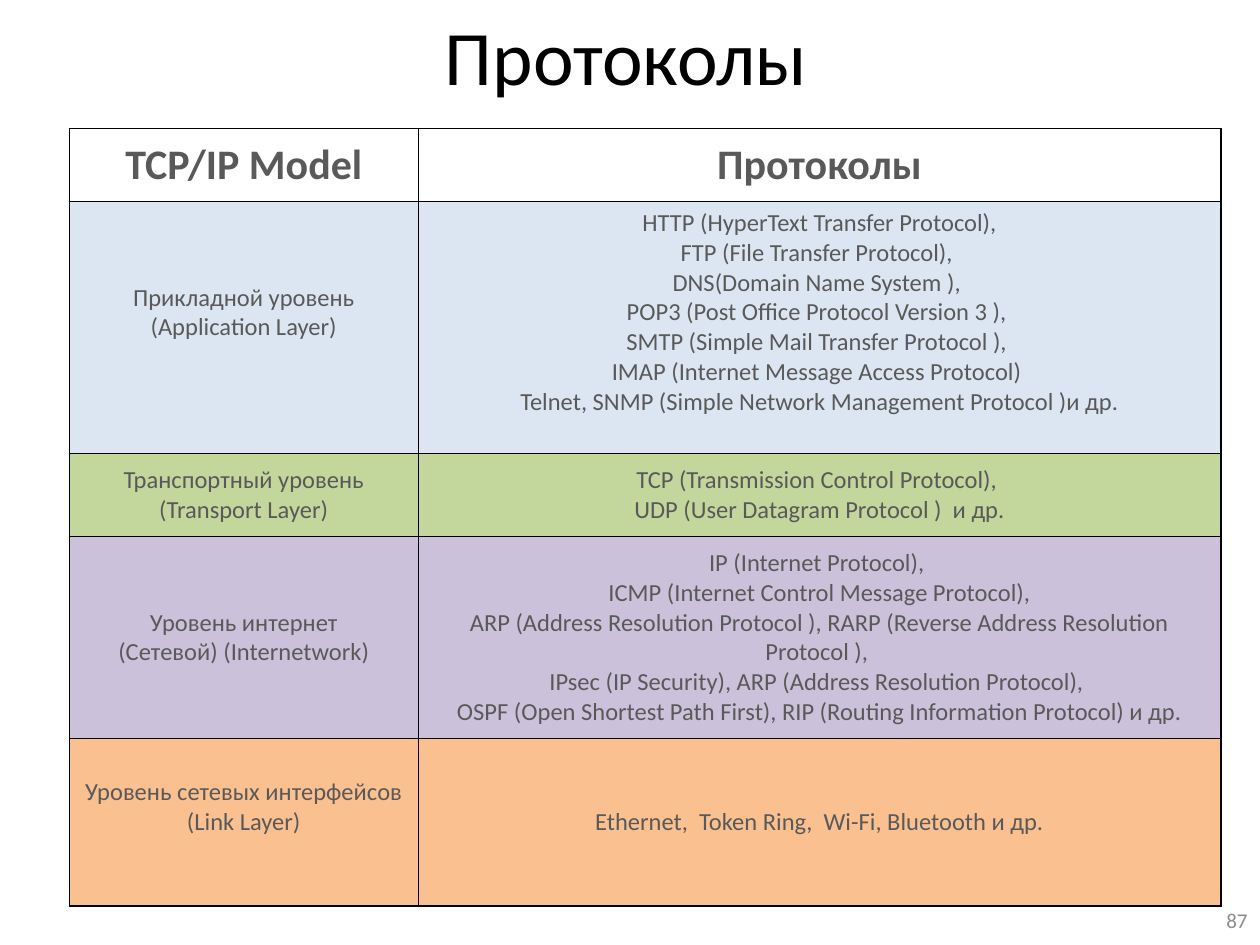
from dataclasses import dataclass
from typing import Any

from lxml import etree
from pptx import Presentation
from pptx import util as u
from pptx.dml.color import RGBColor
from pptx.enum import text
from pptx.oxml import ns

BLACK = RGBColor(0x00, 0x00, 0x00)
DARK_GRAY = RGBColor(0x59, 0x59, 0x59)
PAGE_GRAY = RGBColor(0x8C, 0x8C, 0x8C)
BLUE = RGBColor(0xDC, 0xE6, 0xF2)
GREEN = RGBColor(0xC3, 0xD6, 0x9B)
PURPLE = RGBColor(0xCC, 0xC1, 0xDA)
ORANGE = RGBColor(0xFA, 0xC0, 0x90)

CENTER = text.PP_ALIGN.CENTER
RIGHT = text.PP_ALIGN.RIGHT
MIDDLE = text.MSO_ANCHOR.MIDDLE

BASE = 0.05    # usual bottom margin of a cell, inches
RAISED = 0.29  # bottom margin that lifts the text by half a line

COLUMNS = [2.77, 6.37]
HEADER = ["TCP/IP Model", "Протоколы"]
HEADER_HEIGHT = 0.58

# height, fill, (level lines, bottom margin), (protocol lines, bottom margin)
LAYERS = [
    (2.0, BLUE,
     (["Прикладной уровень", "(Application Layer)"], RAISED),
     ([" HTTP (HyperText Transfer Protocol), ",
       "FTP (File Transfer Protocol), ",
       "DNS(Domain Name System ), ",
       "POP3 (Post Office Protocol Version 3 ), ",
       "SMTP (Simple Mail Transfer Protocol ), ",
       "IMAP (Internet Message Access Protocol) ",
       "Telnet, SNMP (Simple Network Management Protocol )и др."], RAISED)),
    (0.66, GREEN,
     (["Транспортный уровень", "(Transport Layer)"], BASE),
     (["TCP (Transmission Control Protocol), ",
       "UDP (User Datagram Protocol )  и др."], BASE)),
    (1.6, PURPLE,
     (["Уровень интернет", "(Сетевой) (Internetwork)"], BASE),
     (["IP (Internet Protocol), ",
       "ICMP (Internet Control Message Protocol),",
       "ARP (Address Resolution Protocol ), RARP (Reverse Address Resolution Protocol ), ",
       "IPsec (IP Security), ARP (Address Resolution Protocol), ",
       "OSPF (Open Shortest Path First), RIP (Routing Information Protocol) и др."], BASE)),
    (1.33, ORANGE,
     (["Уровень сетевых интерфейсов", "(Link Layer)"], RAISED),
     (["Ethernet,  Token Ring,  Wi-Fi, Bluetooth и др."], BASE)),
]


@dataclass
class Deck:
    s: Any
    font: str = "Calibri"
    border: float = 1

    def add_lines(self, tf, lines, size, color, align=CENTER, bold=False):
        for i, line in enumerate(lines):
            p = tf.paragraphs[0] if i == 0 else tf.add_paragraph()
            p.alignment = align
            r = p.add_run()
            r.text = line
            r.font.name = self.font
            r.font.size = u.Pt(size)
            r.font.bold = bold
            r.font.color.rgb = color

    def label(self, box, line, size, color, align=CENTER):
        sp = self.s.shapes.add_textbox(*map(u.Inches, box))
        tf = sp.text_frame
        tf.word_wrap = True
        tf.vertical_anchor = MIDDLE
        self.add_lines(tf, [line], size, color, align)

    def table(self, left, top, columns, heights):
        frame = self.s.shapes.add_table(
            len(heights), len(columns), u.Inches(left), u.Inches(top),
            u.Inches(sum(columns)), u.Inches(sum(heights)))
        tbl = frame.table
        tbl.first_row = tbl.horz_banding = False
        for column, width in zip(tbl.columns, columns):
            column.width = u.Inches(width)
        for row, height in zip(tbl.rows, heights):
            row.height = u.Inches(height)
        return tbl

    def cell(self, cell, lines, size, fill=None, bold=False, bottom=BASE):
        cell.vertical_anchor = MIDDLE
        cell.margin_bottom = u.Inches(bottom)
        self.add_lines(cell.text_frame, lines, size, DARK_GRAY, bold=bold)
        self.outline(cell)
        if fill is None:
            cell.fill.background()
        else:
            cell.fill.solid()
            cell.fill.fore_color.rgb = fill

    def outline(self, cell):
        """Draw all four borders; called before the fill, which follows them in the XML."""
        pr = cell._tc.get_or_add_tcPr()
        for side in ("lnL", "lnR", "lnT", "lnB"):
            ln = etree.SubElement(pr, ns.qn(f"a:{side}"), w=str(u.Pt(self.border)))
            solid = etree.SubElement(ln, ns.qn("a:solidFill"))
            etree.SubElement(solid, ns.qn("a:srgbClr"), val=str(BLACK))


def main():
    prs = Presentation()
    prs.slide_width, prs.slide_height = u.Inches(10), u.Inches(7.5)
    deck = Deck(prs.slides.add_slide(prs.slide_layouts[6]))

    deck.label((0.47, 0, 9, 0.87), "Протоколы", 44, BLACK)
    deck.label((7.67, 7.1, 2.33, 0.4), "87", 12, PAGE_GRAY, RIGHT)

    heights = [HEADER_HEIGHT] + [layer[0] for layer in LAYERS]
    tbl = deck.table(0.55, 1.02, COLUMNS, heights)
    for col, title in enumerate(HEADER):
        deck.cell(tbl.cell(0, col), [title], 24, bold=True)
    for row, (_, fill, *cells) in enumerate(LAYERS, start=1):
        for col, (lines, bottom) in enumerate(cells):
            deck.cell(tbl.cell(row, col), lines, 14, fill, bottom=bottom)

    prs.save("out.pptx")


if __name__ == "__main__":
    main()
